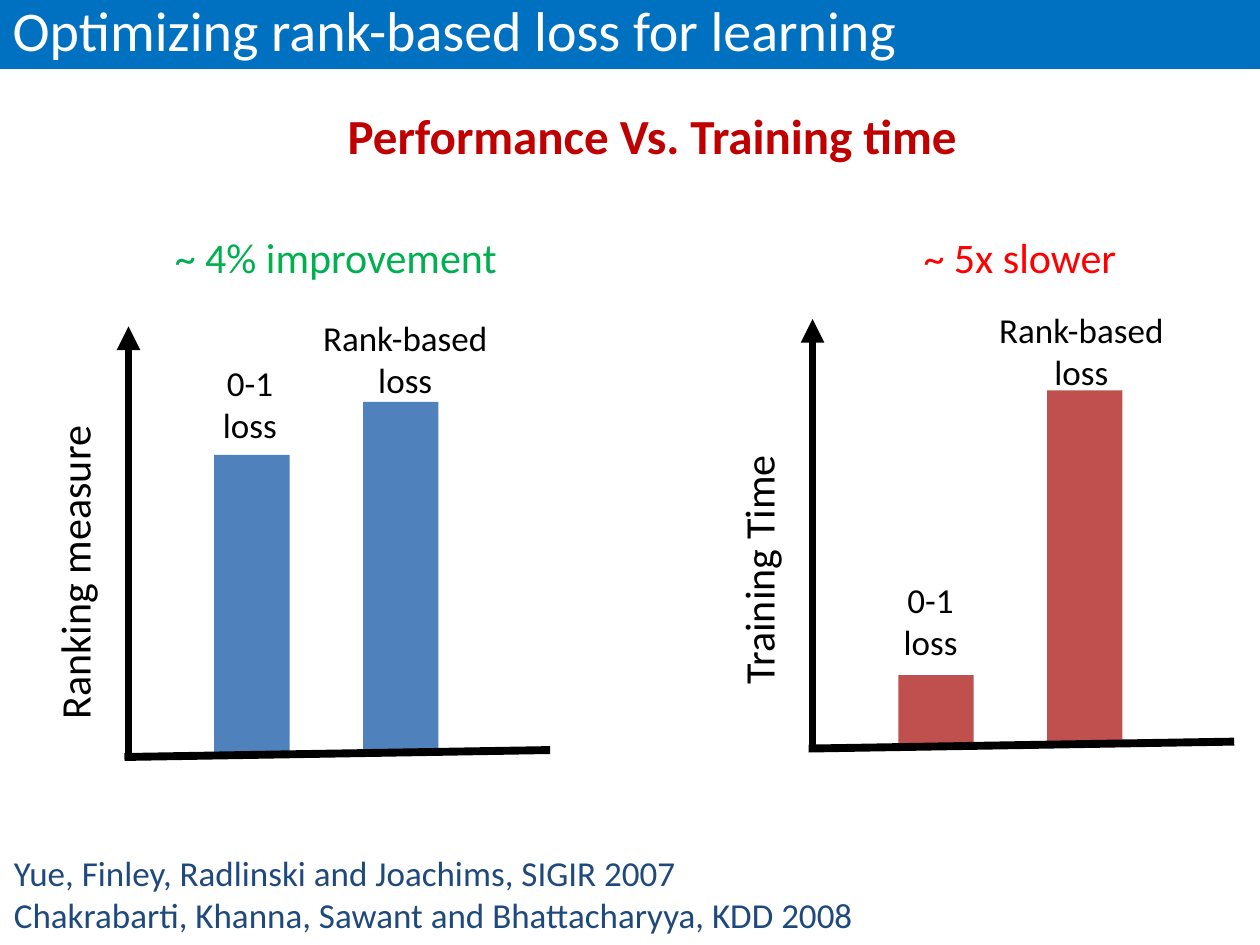
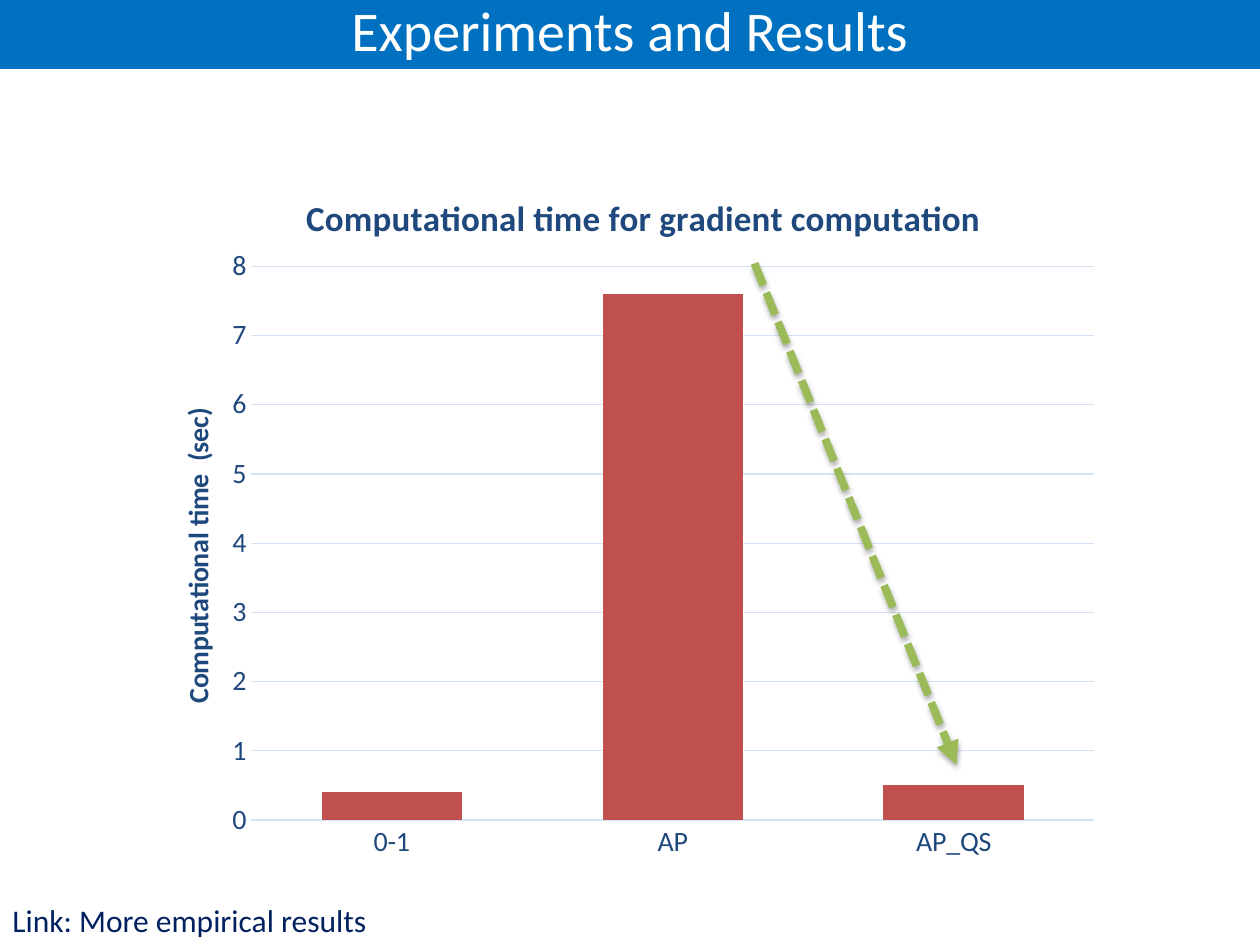
import pptx
import pptx.chart.data
import pptx.dml.color
import pptx.enum.chart
import pptx.enum.dml
import pptx.enum.shapes
import pptx.enum.text
import pptx.oxml
import pptx.oxml.ns
import pptx.util

Cm = pptx.util.Cm
Pt = pptx.util.Pt
qn = pptx.oxml.ns.qn
ALIGN = pptx.enum.text.PP_ALIGN
RECT = pptx.enum.shapes.MSO_SHAPE.RECTANGLE

COLORS = {
    "band": "0070C0",
    "white": "FFFFFF",
    "black": "000000",
    "heading": "C00000",
    "good": "00B050",
    "bad": "FF0000",
    "blue": "4F81BD",
    "red": "C0504D",
    "green": "9BBB59",
    "navy": "1F497D",
    "link": "002060",
    "grid": "D4E3F4",
}
RGB = {k: pptx.dml.color.RGBColor.from_string(v) for k, v in COLORS.items()}


def put_text(tf, text, size=20, color="black", bold=False, align=ALIGN.LEFT):
    tf.word_wrap = True
    tf.text = text
    for p in tf.paragraphs:
        p.alignment = align
        for r in p.runs:
            r.font.name = "Calibri"
            r.font.size = Pt(size)
            r.font.bold = bold
            r.font.color.rgb = RGB[color]


def add_line(s, x1, y1, x2, y2, color="black", arrow=False, dash=None, shadow=""):
    line = s.shapes.add_connector(
        pptx.enum.shapes.MSO_CONNECTOR.STRAIGHT, Cm(x1), Cm(y1), Cm(x2), Cm(y2))
    line.line.color.rgb = RGB[color]
    line.line.width = Pt(4.5)
    if dash:
        line.line.dash_style = dash
    spPr = line._element.spPr
    if arrow:
        ln = spPr.find(qn("a:ln"))
        ln.append(ln.makeelement(qn("a:tailEnd"), {"type": "triangle"}))
    ns = pptx.oxml.ns.nsdecls("a")
    spPr.append(pptx.oxml.parse_xml(f"<a:effectLst {ns}>{shadow}</a:effectLst>"))


prs = pptx.Presentation()
prs.slide_width = Cm(25.4)
prs.slide_height = Cm(19.05)

layout = prs.slide_layouts[5]
title = layout.placeholders[0]
title.left, title.top, title.width, title.height = Cm(0), Cm(-0.23), Cm(25.4), Cm(1.63)
title.text_frame.auto_size = pptx.enum.text.MSO_AUTO_SIZE.NONE

s = prs.slides.add_slide(layout)
band = s.shapes.add_shape(RECT, Cm(0), Cm(-0.08), Cm(25.4), Cm(1.47))
band.fill.solid()
band.fill.fore_color.rgb = RGB["band"]
band.line.fill.background()
band.shadow.inherit = False
layout.shapes._spTree.insert(2, band._element)

put_text(s.shapes.title.text_frame, "Optimizing rank-based loss for learning",
         size=32, color="white")
tb = s.shapes.add_textbox(Cm(6.76), Cm(2), Cm(12.83), Cm(1.45))
put_text(tb.text_frame, "Performance Vs. Training time", size=28, color="heading", bold=True)

PANELS = [
    dict(x=2.59, top=6.58, base=15.26, color="blue", measure="Ranking measure", length=6.58,
         headline="~ 4% improvement", tone="good",
         bars=[("0-1\nloss", 9.17, 7.16, 2.45), ("Rank-based\nloss", 8.1, 6.25, 5.58)]),
    dict(x=16.38, top=6.43, base=15.09, color="red", measure="Training Time", length=5.18,
         headline="~ 5x slower", tone="bad",
         bars=[("0-1\nloss", 13.61, 11.53, 2.38), ("Rank-based\nloss", 7.87, 6.1, 5.42)]),
]
BAR_WIDTH, BAR_START, BAR_STEP = 1.52, 1.73, 3
LABEL_WIDTH, HEADLINE_WIDTH = 4.1, 7.2

for panel in PANELS:
    x, base = panel["x"], panel["base"]
    for i, (label, bar_top, label_top, label_mid) in enumerate(panel["bars"]):
        bar = s.shapes.add_shape(RECT, Cm(x + BAR_START + i * BAR_STEP), Cm(bar_top),
                                 Cm(BAR_WIDTH), Cm(base - 0.08 - bar_top))
        bar.fill.solid()
        bar.fill.fore_color.rgb = RGB[panel["color"]]
        bar.line.fill.background()
        bar.shadow.inherit = False
        tb = s.shapes.add_textbox(Cm(x + label_mid - LABEL_WIDTH / 2), Cm(label_top),
                                  Cm(LABEL_WIDTH), Cm(1.96))
        put_text(tb.text_frame, label, align=ALIGN.CENTER)
    add_line(s, x, base, x, panel["top"], arrow=True)
    add_line(s, x - 0.08, base, x + 8.5, base - 0.14)
    tb = s.shapes.add_textbox(Cm(x - 1.1 - panel["length"] / 2), Cm(10.82),
                              Cm(panel["length"]), Cm(1.27))
    tb.rotation = 270
    put_text(tb.text_frame, panel["measure"], size=24)
    tb = s.shapes.add_textbox(Cm(x + 4.18 - HEADLINE_WIDTH / 2), Cm(4.55),
                              Cm(HEADLINE_WIDTH), Cm(1.27))
    put_text(tb.text_frame, panel["headline"], size=24, color=panel["tone"], align=ALIGN.CENTER)

tb = s.shapes.add_textbox(Cm(0.03), Cm(17.04), Cm(17.6), Cm(1.96))
put_text(tb.text_frame,
         "Yue, Finley, Radlinski and Joachims, SIGIR 2007\n"
         "Chakrabarti, Khanna, Sawant and Bhattacharyya, KDD 2008", color="navy")

s = prs.slides.add_slide(layout)
put_text(s.shapes.title.text_frame, "Experiments and Results",
         size=32, color="white", align=ALIGN.CENTER)

data = pptx.chart.data.CategoryChartData()
data.categories = ["0-1", "AP", "AP_QS"]
data.add_series("Series 1", [0.4, 7.6, 0.5])
chart = s.shapes.add_chart(pptx.enum.chart.XL_CHART_TYPE.COLUMN_CLUSTERED,
                           Cm(2.92), Cm(3.05), Cm(19.53), Cm(14.5), data).chart
chart.has_legend = False
chart.font.name = "Calibri"
chart.font.size = Pt(16)
chart.has_title = True
put_text(chart.chart_title.text_frame, "Computational time for gradient computation",
         color="navy", bold=True, align=ALIGN.CENTER)

plot = chart.plots[0]
plot.gap_width = 100
plot.overlap = -24
plot.vary_by_categories = False
plot.series[0].format.fill.solid()
plot.series[0].format.fill.fore_color.rgb = RGB["red"]

cat, val = chart.category_axis, chart.value_axis
for axis in (cat, val):
    axis.major_tick_mark = pptx.enum.chart.XL_TICK_MARK.NONE
    axis.minor_tick_mark = pptx.enum.chart.XL_TICK_MARK.NONE
    axis.tick_labels.font.name = "Calibri"
    axis.tick_labels.font.size = Pt(16)
    axis.tick_labels.font.color.rgb = RGB["navy"]
for line in (cat.format.line, val.major_gridlines.format.line):
    line.color.rgb = RGB["grid"]
    line.width = Pt(0.75)
val.format.line.fill.background()
val.minimum_scale, val.maximum_scale, val.major_unit = 0, 8, 1
tf = val.axis_title.text_frame
put_text(tf, "Computational time  (sec)", size=16, color="navy", bold=True, align=ALIGN.CENTER)
tf._txBody.bodyPr.set("rot", "-5400000")
tf._txBody.bodyPr.set("vert", "horz")

plot_area = chart._chartSpace.chart.plotArea
for parent, index, box in (
    (plot_area, 0, dict(x=0.11, y=0.16, w=0.87, h=0.77)),
    (chart.chart_title._element, 1, dict(x=0.16, y=0.05)),
    (val.axis_title._element, 1, dict(x=0.03, y=0.35)),
):
    for old in parent.findall(qn("c:layout")):
        parent.remove(old)
    target = '<c:layoutTarget val="inner"/>' if "w" in box else ""
    modes = "".join(f'<c:{k}Mode val="edge"/>' for k in "xy")
    sizes = "".join(f'<c:{k} val="{v}"/>' for k, v in box.items())
    parent.insert(index, pptx.oxml.parse_xml(
        f'<c:layout {pptx.oxml.ns.nsdecls("c")}><c:manualLayout>'
        f"{target}{modes}{sizes}</c:manualLayout></c:layout>"))

add_line(s, 15.21, 5.31, 19.28, 15.42, color="green", arrow=True,
         dash=pptx.enum.dml.MSO_LINE.SQUARE_DOT,
         shadow='<a:outerShdw blurRad="40000" dist="23000" dir="5400000" rotWithShape="0">'
                '<a:srgbClr val="000000"><a:alpha val="35000"/></a:srgbClr></a:outerShdw>')
tb = s.shapes.add_textbox(Cm(0), Cm(18.03), Cm(7.85), Cm(1.02))
put_text(tb.text_frame, "Link: More empirical results", size=18, color="link")

prs.save("out.pptx")
